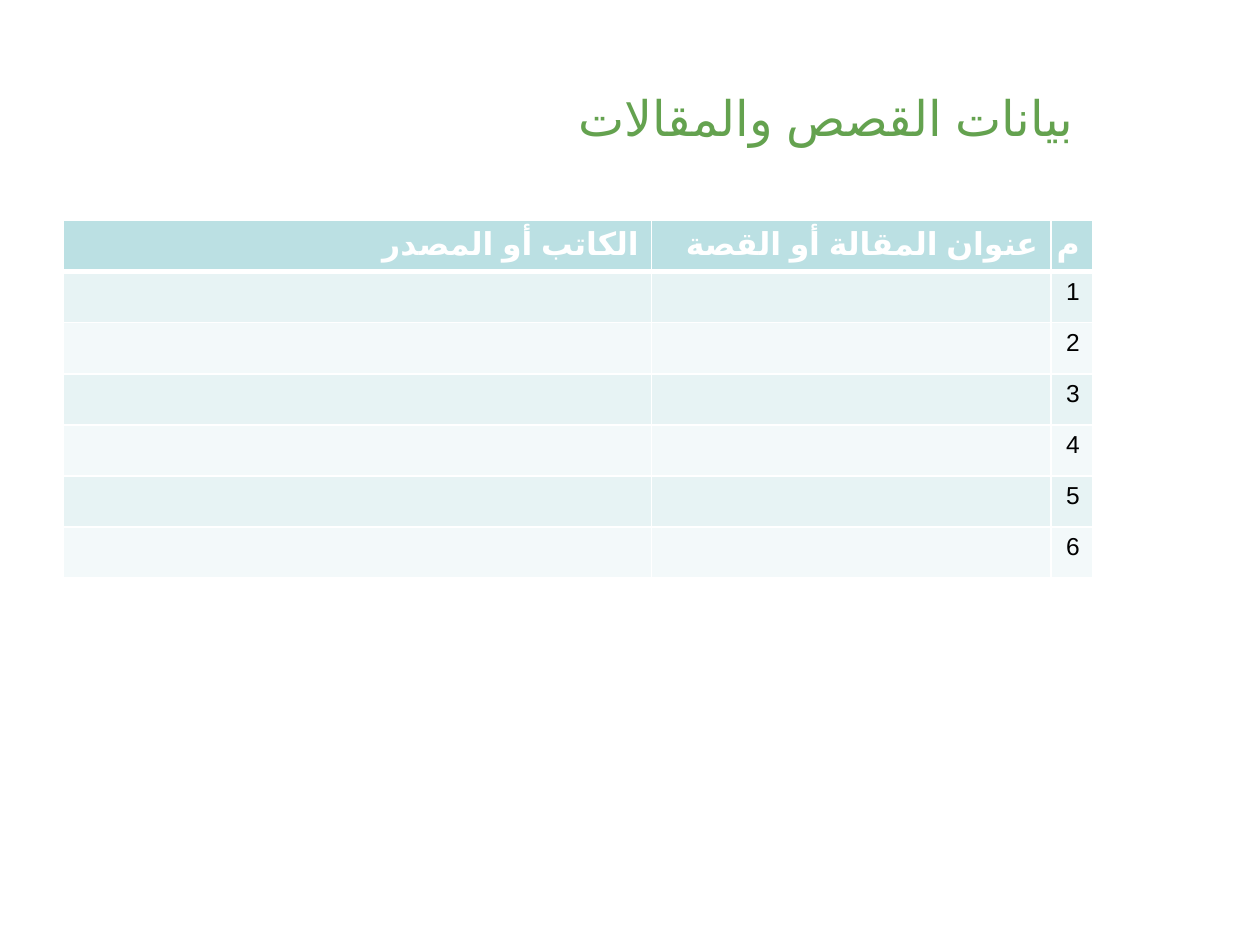
from dataclasses import dataclass

from lxml import etree
from pptx import Presentation
from pptx.dml.color import RGBColor
from pptx.enum.text import MSO_ANCHOR, PP_ALIGN
from pptx.oxml.ns import qn
from pptx.util import Inches, Pt

RIGHT = PP_ALIGN.RIGHT
MIDDLE = MSO_ANCHOR.MIDDLE


@dataclass(frozen=True)
class Theme:
    font: str = "Arial"
    title: str = "64A24F"
    text: str = "000000"
    white: str = "FFFFFF"
    header: str = "BBE0E3"
    bands: tuple = ("E7F3F4", "F3F9FA")
    title_size: int = 28
    header_size: int = 18
    body_size: int = 14


THEME = Theme()
HEADERS = ["الكاتب أو المصدر", "عنوان المقالة أو القصة", "م"]
COL_WIDTHS = [4.67, 3.17, 0.33]
ENTRY_COUNT = 6
TABLE_HEIGHT = 2.84


def add_rtl_text(tf, text, size, color, bold=False):
    p = tf.paragraphs[0]
    p.alignment = RIGHT
    p._p.get_or_add_pPr().set("rtl", "1")
    r = p.add_run()
    r.text = text
    r.font.name = THEME.font
    r.font.size = Pt(size)
    r.font.bold = bold
    r.font.color.rgb = RGBColor.from_string(color)
    # Arabic letters take the complex-script font
    r_pr = r._r.get_or_add_rPr()
    r_pr.set("lang", "ar-SA")
    etree.SubElement(r_pr, qn("a:cs"), typeface=THEME.font)


def add_title(s, text):
    box = s.shapes.add_textbox(Inches(0.5), Inches(0.3), Inches(8.12), Inches(1.25))
    tf = box.text_frame
    tf.word_wrap = True
    tf.vertical_anchor = MIDDLE
    add_rtl_text(tf, text, THEME.title_size, THEME.title)


def style_cell(cell, fill, top_width=1, bottom_width=1):
    # Borders come before the fill in the cell properties
    tc_pr = cell._tc.get_or_add_tcPr()
    for side, width in (("L", 1), ("R", 1), ("T", top_width), ("B", bottom_width)):
        ln = etree.SubElement(tc_pr, qn(f"a:ln{side}"), w=str(Pt(width)))
        solid = etree.SubElement(ln, qn("a:solidFill"))
        etree.SubElement(solid, qn("a:srgbClr"), val=THEME.white)
    cell.fill.solid()
    cell.fill.fore_color.rgb = RGBColor.from_string(fill)


def add_entry_table(s):
    row_count = ENTRY_COUNT + 1
    table = s.shapes.add_table(
        row_count, len(HEADERS), Inches(0.5), Inches(1.75),
        Inches(sum(COL_WIDTHS)), Inches(TABLE_HEIGHT)).table
    for col, width in zip(table.columns, COL_WIDTHS):
        col.width = Inches(width)
    for row in table.rows:
        row.height = Inches(TABLE_HEIGHT / row_count)

    # Header row
    for cell, label in zip(table.rows[0].cells, HEADERS):
        style_cell(cell, THEME.header, bottom_width=3)
        add_rtl_text(cell.text_frame, label, THEME.header_size, THEME.white, True)

    # Numbered empty rows; the first shares the heavy header rule
    for number in range(1, row_count):
        cells = list(table.rows[number].cells)
        for cell in cells:
            style_cell(cell, THEME.bands[(number - 1) % 2],
                       top_width=3 if number == 1 else 1)
        add_rtl_text(cells[-1].text_frame, str(number), THEME.body_size, THEME.text)


def main():
    prs = Presentation()
    prs.slide_width, prs.slide_height = Inches(10), Inches(7.5)
    s = prs.slides.add_slide(prs.slide_layouts[6])
    add_title(s, "بيانات القصص والمقالات")
    add_entry_table(s)
    prs.save("out.pptx")


if __name__ == "__main__":
    main()
